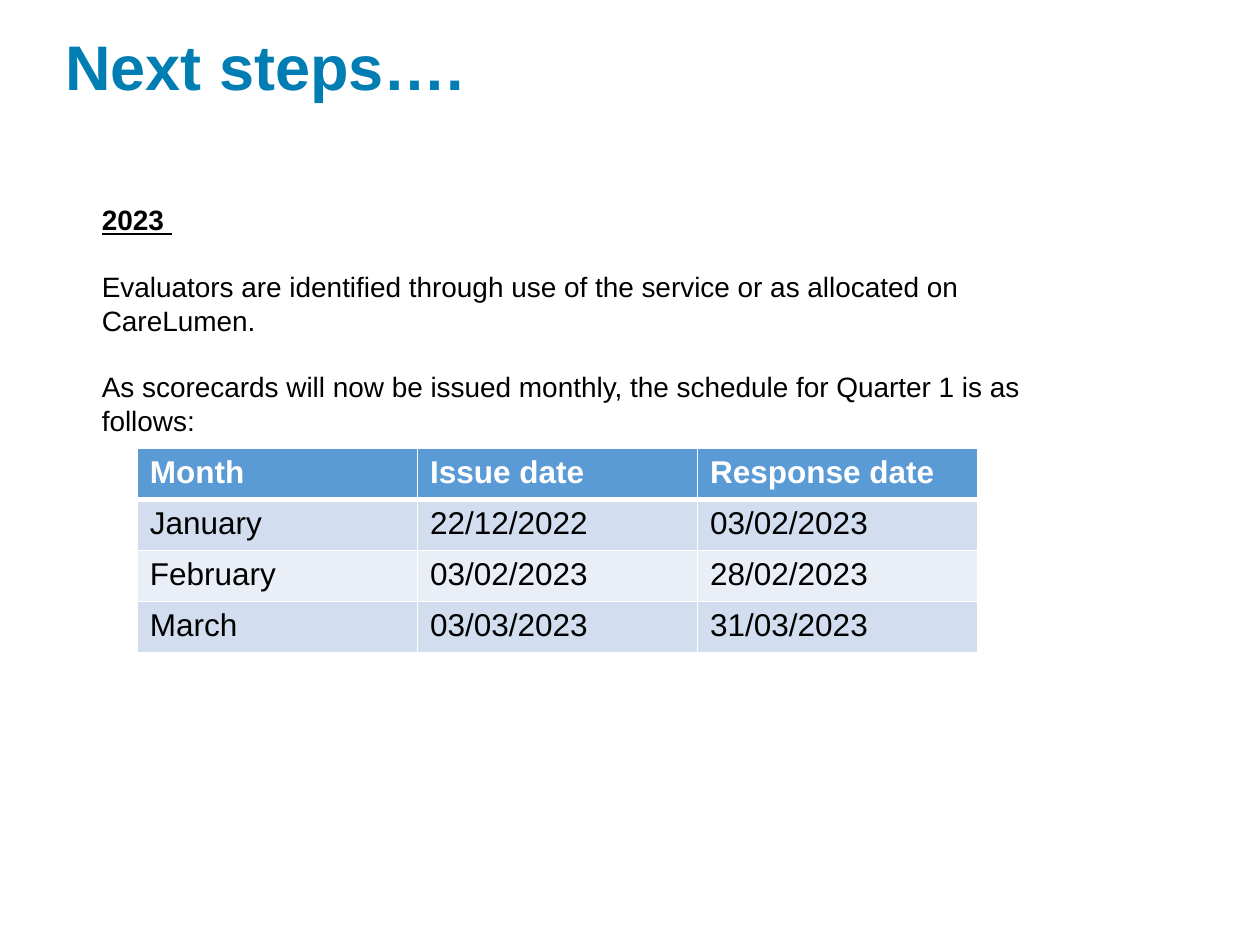
from dataclasses import dataclass

from lxml import etree
from pptx import Presentation
from pptx.dml.color import RGBColor
from pptx.enum.text import MSO_ANCHOR
from pptx.oxml.ns import qn
from pptx.util import Inches, Pt

TOP, MIDDLE = MSO_ANCHOR.TOP, MSO_ANCHOR.MIDDLE


@dataclass(frozen=True)
class Theme:
    font: str = "Arial"
    title_color: str = "007DB2"
    text_color: str = "000000"
    white: str = "FFFFFF"
    header_fill: str = "5B9BD5"
    bands: tuple = ("D2DEEF", "EAEFF7")
    title_size: int = 36
    body_size: int = 16
    table_size: int = 18
    body_gap: int = 19


class SlideBuilder:
    def __init__(self, slide, theme):
        self.s = slide
        self.theme = theme

    def add_run(self, p, text, size, color, bold=False, underline=False):
        r = p.add_run()
        r.text = text
        r.font.name = self.theme.font
        r.font.size = Pt(size)
        r.font.bold = bold
        r.font.underline = underline
        r.font.color.rgb = RGBColor.from_string(color)

    def text_frame(self, x, y, w, h, anchor=TOP):
        sp = self.s.shapes.add_textbox(Inches(x), Inches(y), Inches(w), Inches(h))
        tf = sp.text_frame
        tf.word_wrap = True
        tf.vertical_anchor = anchor
        return tf

    def title(self, text, *box):
        p = self.text_frame(*box, anchor=MIDDLE).paragraphs[0]
        p.line_spacing = 0.9
        self.add_run(p, text, self.theme.title_size, self.theme.title_color, bold=True)

    def body(self, heading, paragraphs, *box):
        t = self.theme
        tf = self.text_frame(*box)
        self.add_run(tf.paragraphs[0], heading, t.body_size, t.text_color,
                     bold=True, underline=True)
        for text in paragraphs:
            p = tf.add_paragraph()
            p.space_before = Pt(t.body_gap)
            self.add_run(p, text, t.body_size, t.text_color)

    def cell_borders(self, cell, widths):
        # Borders come before the fill in the cell properties
        tc_pr = cell._tc.get_or_add_tcPr()
        for i, (side, width) in enumerate(widths.items()):
            ln = etree.Element(qn(f"a:ln{side}"), w=str(Pt(width)))
            fill = etree.SubElement(ln, qn("a:solidFill"))
            etree.SubElement(fill, qn("a:srgbClr"), val=self.theme.white)
            tc_pr.insert(i, ln)

    def table(self, rows, x, y, w, h):
        t = self.theme
        n_rows, n_cols = len(rows), len(rows[0])
        table = self.s.shapes.add_table(n_rows, n_cols, Inches(x), Inches(y),
                                        Inches(w), Inches(h)).table
        for i, row in enumerate(rows):
            header = i == 0
            fill = t.header_fill if header else t.bands[(i - 1) % 2]
            color = t.white if header else t.text_color
            widths = {"L": 1, "R": 1, "T": 3 if i == 1 else 1, "B": 3 if header else 1}
            for j, text in enumerate(row):
                cell = table.cell(i, j)
                cell.fill.solid()
                cell.fill.fore_color.rgb = RGBColor.from_string(fill)
                self.cell_borders(cell, widths)
                self.add_run(cell.text_frame.paragraphs[0], text, t.table_size,
                             color, bold=header)


def main():
    prs = Presentation()
    prs.slide_width, prs.slide_height = Inches(10), Inches(7.5)
    builder = SlideBuilder(prs.slides.add_slide(prs.slide_layouts[6]), Theme())

    # Title
    builder.title("Next steps….", 0.42, 0.26, 9.1, 0.59)

    # Introduction
    builder.body("2023 ", [
        "Evaluators are identified through use of the service or as allocated on CareLumen.",
        "As scorecards will now be issued monthly, the schedule for Quarter 1 is as follows:",
    ], 0.71, 1.56, 8.2, 2.89)

    # Quarter 1 schedule
    builder.table([
        ("Month", "Issue date", "Response date"),
        ("January", "22/12/2022", "03/02/2023"),
        ("February", "03/02/2023", "28/02/2023"),
        ("March", "03/03/2023", "31/03/2023"),
    ], 1.09, 3.56, 6.67, 1.62)

    prs.save("out.pptx")


if __name__ == "__main__":
    main()
